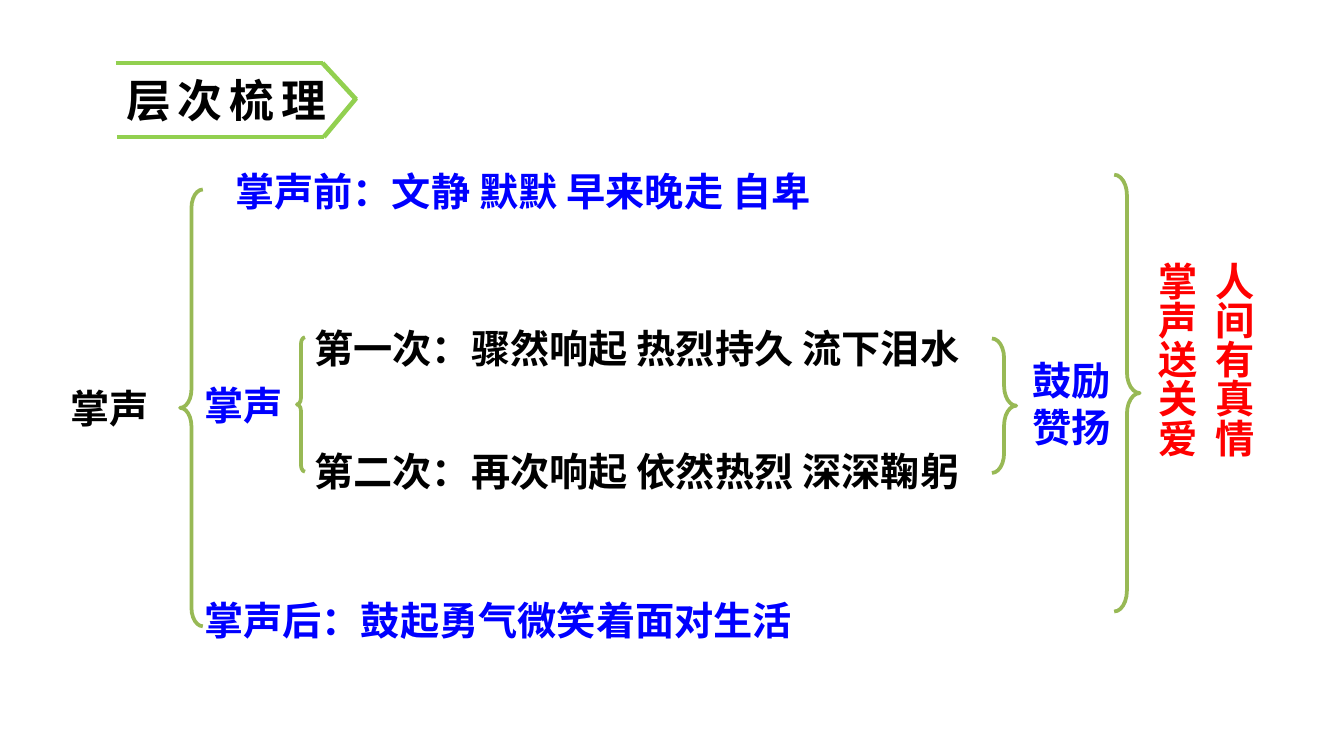
from pptx import Presentation
from pptx.dml.color import RGBColor
from pptx.enum.shapes import MSO_CONNECTOR, MSO_SHAPE
from pptx.enum.text import MSO_ANCHOR, PP_ALIGN
from pptx.oxml.ns import qn
from pptx.util import Pt
from lxml.etree import SubElement

FONT = "Noto Sans CJK SC"
BLACK, BLUE, RED, WHITE = "000000", "0000FF", "FF0000", "FFFFFF"
BRACE_GREEN, BANNER_GREEN = "98B955", "92D050"


def color(value):
    """Turn a hex string into a colour."""
    return RGBColor.from_string(value)


def write_text(frame, text, size=21, ink=BLACK, align=PP_ALIGN.CENTER,
               line_spacing=None, gap=0, tracking=None):
    """Fill a text frame with one bold paragraph per line of text."""
    frame.word_wrap = True
    for index, line in enumerate(text.split("\n")):
        para = frame.add_paragraph() if index else frame.paragraphs[0]
        para.alignment = align
        para.line_spacing = line_spacing
        para.space_before = Pt(gap if index else 0)
        span = para.add_run()
        span.text = line
        span.font.size = Pt(size)
        span.font.bold = True
        span.font.name = FONT
        span.font.color.rgb = color(ink)
        properties = span.font._element
        SubElement(properties, qn("a:ea")).set("typeface", FONT)
        if tracking:
            properties.set("spc", str(round(tracking * 100)))


def add_label(page, left, top, width, height, text, vertical=False, **style):
    """Add a text box, with its lines running downwards if vertical."""
    box = page.shapes.add_textbox(Pt(left), Pt(top), Pt(width), Pt(height))
    frame = box.text_frame
    frame.margin_left = frame.margin_right = Pt(5)
    frame.margin_top = frame.margin_bottom = Pt(2.8)
    if vertical:
        frame._txBody.bodyPr.set("vert", "eaVert")
    write_text(frame, text, **style)


def add_brace(page, left, top, width, height, mirrored=False):
    """Add a green curly brace that points left, or right if mirrored."""
    brace = page.shapes.add_shape(MSO_SHAPE.LEFT_BRACE, Pt(left), Pt(top), Pt(width), Pt(height))
    brace.shadow.inherit = False
    brace.adjustments[0] = 0.81
    brace.fill.background()
    brace.line.color.rgb = color(BRACE_GREEN)
    brace.line.width = Pt(2)
    if mirrored:
        brace._element.spPr.xfrm.set("flipH", "1")


def add_edge(page, start, end):
    """Add one straight edge of the title banner."""
    edge = page.shapes.add_connector(
        MSO_CONNECTOR.STRAIGHT, *(Pt(value) for value in start + end))
    edge.line.color.rgb = color(BANNER_GREEN)
    edge.line.width = Pt(2.5)
    SubElement(edge._element.spPr, qn("a:effectLst"))


def add_banner(page, title):
    """Add the title with its arrow-shaped outline."""
    top_left, top_right = (62, 33.8), (172.8, 33.8)
    bottom_left, bottom_right = (62.6, 73.4), (173.5, 73.4)
    add_edge(page, top_left, top_right)
    add_edge(page, bottom_left, bottom_right)
    plate = page.shapes.add_shape(MSO_SHAPE.RECTANGLE, Pt(60.5), Pt(35.3), Pt(132.5), Pt(36))
    plate.shadow.inherit = False
    plate.fill.background()
    plate.line.color.rgb = color(WHITE)
    plate.line.width = Pt(0.75)
    plate.text_frame.vertical_anchor = MSO_ANCHOR.MIDDLE
    write_text(plate.text_frame, title, size=24, align=PP_ALIGN.LEFT, tracking=3.8)
    add_edge(page, top_right, (190.8, 53.3))
    add_edge(page, bottom_right, (190.8, 52.6))


def main():
    """Build the slide and save it."""
    deck = Presentation()
    deck.slide_width, deck.slide_height = Pt(720), Pt(405)
    page = deck.slides.add_slide(deck.slide_layouts[6])

    add_banner(page, "层次梳理")

    add_label(page, 5.8, 203, 105.8, 31, "掌声")
    add_brace(page, 96.5, 101.5, 12.2, 234)
    add_label(page, 107.3, 87.1, 345.6, 31, "掌声前：文静 默默 早来晚走 自卑", ink=BLUE)
    add_label(page, 98.6, 201.6, 63.4, 31, "掌声", ink=BLUE)
    add_label(page, 103, 316.8, 327.6, 56.2, "掌声后：鼓起勇气微笑着面对生活", ink=BLUE)

    add_brace(page, 159.1, 180.7, 4.3, 72)
    add_label(page, 163.4, 163.4, 372.2, 104.4,
              "第一次：骤然响起 热烈持久 流下泪水\n第二次：再次响起 依然热烈 深深鞠躬",
              align=PP_ALIGN.LEFT, line_spacing=1.3, gap=33.4)
    add_brace(page, 531.4, 181.4, 13, 72, mirrored=True)
    add_label(page, 542.2, 187.9, 63.4, 56.2, "鼓励赞扬", ink=BLUE)

    add_brace(page, 596.9, 93.6, 13.7, 234, mirrored=True)
    add_label(page, 611.3, 137.5, 72, 147.6, "人间有真情\n掌声送关爱",
              vertical=True, ink=RED, line_spacing=1.2)

    deck.save("out.pptx")


if __name__ == "__main__":
    main()
